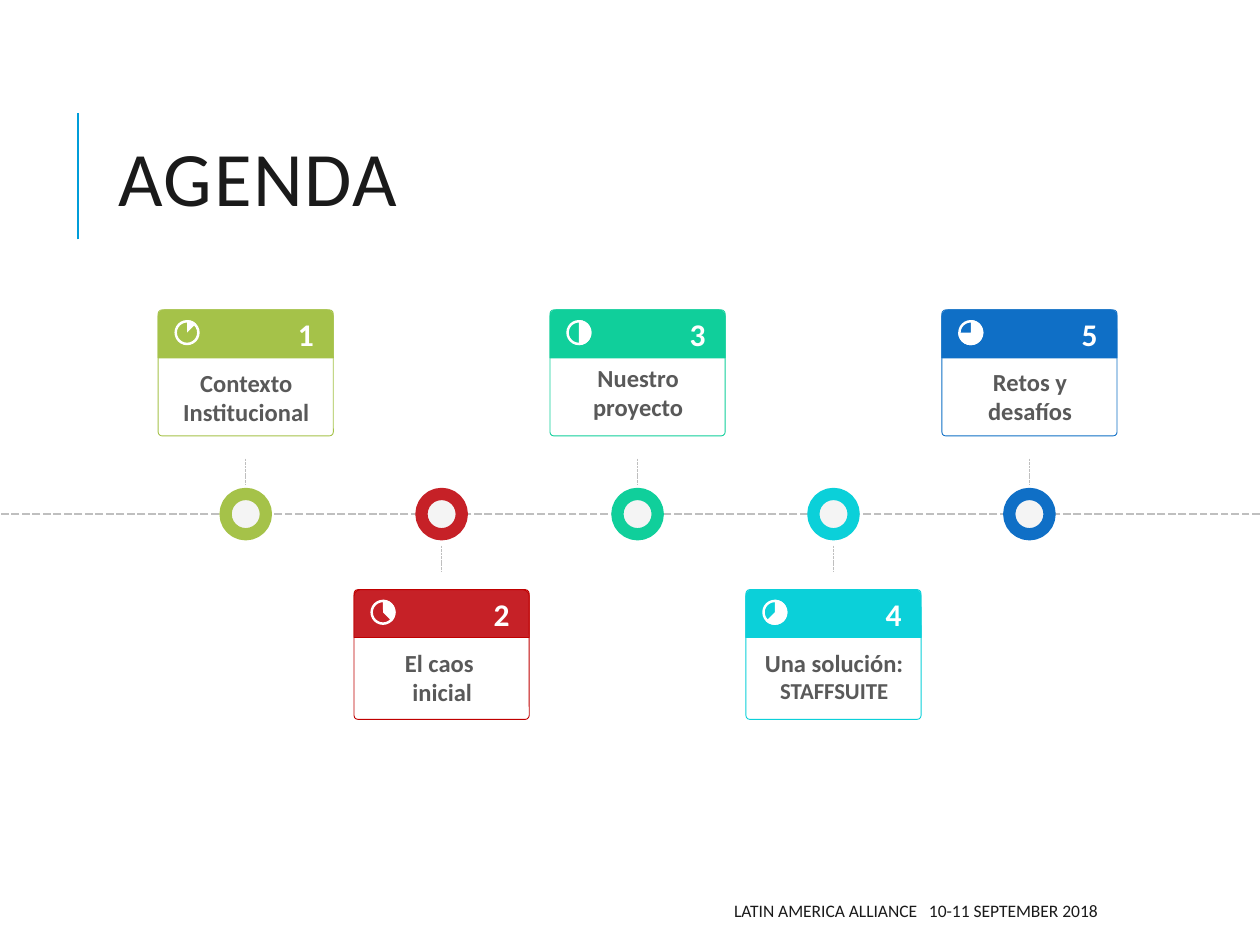
from lxml.etree import SubElement
from pptx import Presentation
from pptx.dml.color import RGBColor
from pptx.enum.dml import MSO_LINE
from pptx.enum.shapes import MSO_CONNECTOR, MSO_SHAPE
from pptx.enum.text import MSO_ANCHOR, PP_ALIGN
from pptx.oxml.ns import qn
from pptx.util import Inches, Pt

WHITE = RGBColor(0xFF, 0xFF, 0xFF)
INK = RGBColor(0x1A, 0x1A, 0x1A)
LABEL_GRAY = RGBColor(0x59, 0x59, 0x59)
LINE_GRAY = RGBColor(0xBF, 0xBF, 0xBF)
DOT_GRAY = RGBColor(0xF4, 0xF4, 0xF4)
ACCENT = RGBColor(0x00, 0x9D, 0xD9)
GREEN = RGBColor(0xA5, 0xC2, 0x49)
RED = RGBColor(0xC6, 0x21, 0x27)
DARK_RED = RGBColor(0xC0, 0x00, 0x00)
TEAL = RGBColor(0x10, 0xCF, 0x9B)
CYAN = RGBColor(0x0B, 0xD0, 0xD9)
BLUE = RGBColor(0x0F, 0x6F, 0xC6)

presentation = Presentation()
presentation.slide_width = Inches(10)
presentation.slide_height = Inches(7.5)
slide = presentation.slides.add_slide(presentation.slide_layouts[6])
shapes = slide.shapes


def write(shape, paragraphs, color, bold=False, align=PP_ALIGN.LEFT,
          anchor=MSO_ANCHOR.MIDDLE, insets=(0.1, 0.05, 0.1, 0.05)):
    """Fill a shape with paragraphs, each a list of (text, size) runs."""
    frame = shape.text_frame
    frame.word_wrap = True
    frame.vertical_anchor = anchor
    (frame.margin_left, frame.margin_top,
     frame.margin_right, frame.margin_bottom) = map(Inches, insets)
    for index, runs in enumerate(paragraphs):
        paragraph = frame.add_paragraph() if index else frame.paragraphs[0]
        paragraph.alignment = align
        for text, size in runs:
            run = paragraph.add_run()
            run.text = text
            run.font.name = "Calibri"
            run.font.size = Pt(size)
            run.font.bold = bold
            run.font.color.rgb = color
    return frame


def add_line(x1, y1, x2, y2, color, width, dash=None):
    line = shapes.add_connector(MSO_CONNECTOR.STRAIGHT, Inches(x1), Inches(y1),
                                Inches(x2), Inches(y2))
    line.line.color.rgb = color
    line.line.width = Pt(width)
    if dash:
        line.line.dash_style = dash
    SubElement(line._element.spPr, qn("a:effectLst"))


# Title with its accent bar
add_line(0.62, 1.9, 0.62, 0.9, ACCENT, 1.5)
title = shapes.add_textbox(Inches(0.84), Inches(0.64), Inches(7.97), Inches(1.64))
title_frame = write(title, [[("AGENDA", 44)]], INK)
title_frame.paragraphs[0].line_spacing = 0.8
title_frame.paragraphs[0].runs[0].font._element.set("spc", "100")

# Timeline axis
add_line(10, 4.08, 0, 4.08, LINE_GRAY, 1.5, MSO_LINE.SQUARE_DOT)

# Agenda steps: colour, border, degrees of the clock filled, label top, label
STEPS = [
    (GREEN, GREEN, 45, 2.88, [[("Contexto", 14)], [("Institucional", 14)]]),
    (RED, DARK_RED, 135, 5.1, [[("El caos ", 14)], [("inicial", 14)]]),
    (TEAL, TEAL, 180, 2.84, [[("Nuestro proyecto", 14)]]),
    (CYAN, CYAN, 225, 5.1, [[("Una solución: ", 14), ("STAFFSUITE", 13)]]),
    (BLUE, BLUE, 270, 2.87, [[("Retos y desafíos", 14)]]),
]
FIRST_CENTER, LAST_CENTER = 1.95, 8.17
CARD_WIDTH = 1.39
STEP_GAP = (LAST_CENTER - FIRST_CENTER) / (len(STEPS) - 1)

for index, (color, border, degrees, label_top, label) in enumerate(STEPS):
    center = FIRST_CENTER + index * STEP_GAP
    left = center - CARD_WIDTH / 2
    is_above = index % 2 == 0
    top, height, stem_top = (2.46, 1, 3.64) if is_above else (4.68, 1.03, 4.33)
    icon = (left + 0.13, top + 0.08, 0.2, 0.2)

    # Stem, timeline dot, card, card header, clock rim and clock sector
    add_line(center, stem_top, center, stem_top + 0.2, LINE_GRAY, 0.5,
             MSO_LINE.SQUARE_DOT)
    parts = [
        (MSO_SHAPE.OVAL, (center - 0.16, 3.92, 0.32, 0.32), [], DOT_GRAY, color, 7),
        (MSO_SHAPE.ROUNDED_RECTANGLE, (left, top, CARD_WIDTH, height), [0.03],
         None, border, 0.5),
        (MSO_SHAPE.ROUND_2_SAME_RECTANGLE, (left, top, CARD_WIDTH, 0.38), [0.13, 0],
         color, border, 0.5),
        (MSO_SHAPE.DONUT, icon, [0.1], WHITE, None, 0),
        # Angles are in 60000ths of a degree, adjustments in 100000ths
        (MSO_SHAPE.PIE, icon, [270 * 0.6, (degrees + 270) % 360 * 0.6],
         WHITE, None, 0),
    ]
    for kind, box, adjustments, fill, outline, width in parts:
        shape = shapes.add_shape(kind, *map(Inches, box))
        shape.shadow.inherit = False
        for position, value in enumerate(adjustments):
            shape.adjustments[position] = value
        if fill is None:
            shape.fill.background()
        else:
            shape.fill.solid()
            shape.fill.fore_color.rgb = fill
        if outline is None:
            shape.line.fill.background()
        else:
            shape.line.color.rgb = outline
            shape.line.width = Pt(width)
        if kind == MSO_SHAPE.ROUND_2_SAME_RECTANGLE:
            write(shape, [[(str(index + 1), 18)]], WHITE, bold=True,
                  align=PP_ALIGN.RIGHT, insets=(0.04, 0.03, 0.14, 0.04))

    # Card label
    label_box = shapes.add_textbox(Inches(center - 0.68), Inches(label_top),
                                   Inches(1.37), Inches(0.55))
    write(label_box, label, LABEL_GRAY, bold=True, align=PP_ALIGN.CENTER,
          anchor=MSO_ANCHOR.TOP, insets=(0.04, 0.04, 0.04, 0.04))

# Footer
footer = shapes.add_textbox(Inches(3.97), Inches(7.08), Inches(4.84), Inches(0.3))
write(footer, [[("LATIN AMERICA ALLIANCE   10-11 SEPTEMBER 2018", 10)]], INK,
      align=PP_ALIGN.RIGHT)

presentation.save("out.pptx")
